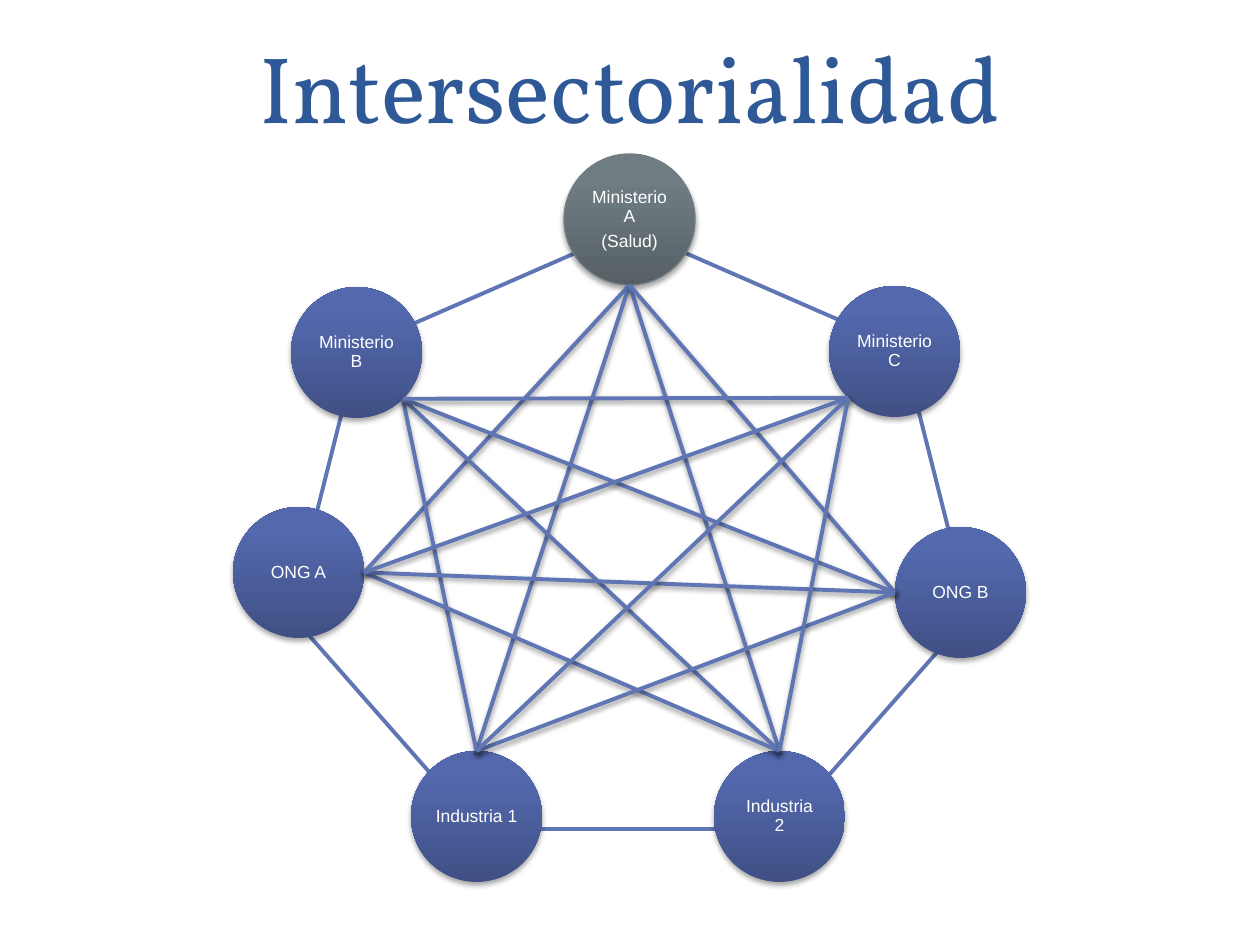
from itertools import combinations

from lxml.etree import SubElement as Sub
from pptx import Presentation
from pptx.dml.color import RGBColor as Rgb
from pptx.enum.shapes import MSO_CONNECTOR as Link, MSO_SHAPE as Kind
from pptx.enum.text import MSO_ANCHOR as Anchor, PP_ALIGN as Align
from pptx.oxml.ns import qn
from pptx.util import Emu, Pt

SCALE = 914400 / 126
SIZE = 131
INK = {
    "line": "6076B4", "title": "2F5897", "white": "FFFFFF",
    "rim": "727D82", "shade": "000000",
}
BLUE = {0: "405085", 80: "5368AD", 100: "5168B0"}
GREY = {0: "566065", 80: "6F7D83", 100: "6F7E84"}
NODES = {
    "min_a": (564, 154, "Ministerio A\n(Salud)", 4),
    "min_b": (291, 287, "Ministerio B", 5),
    "ong_a": (233, 507, "ONG A", 6),
    "ind_1": (411, 751, "Industria 1", 0),
    "ind_2": (714, 751, "Industria\v2", 0),
    "ong_b": (895, 527, "ONG B", 2),
    "min_c": (829, 286, "Ministerio C", 3),
}
HALF, DIAG = 0.5, 0.5 ** 1.5
SITES = {
    0: (HALF, 0), 2: (0, HALF), 3: (HALF - DIAG, HALF + DIAG),
    4: (HALF, 1), 5: (HALF + DIAG, HALF + DIAG), 6: (1, HALF),
}


def px(num):
    return Emu(round(num * SCALE))


def write(frame, text, font="Arial", size=10, ink="white", pad=None, lead=None, after=None):
    frame.word_wrap = True
    frame.vertical_anchor = Anchor.MIDDLE
    if pad is not None:
        frame.margin_left = frame.margin_right = px(pad)
        frame.margin_top = frame.margin_bottom = px(pad)
    frame.text = text
    for para in frame.paragraphs:
        para.alignment = Align.CENTER
        if lead:
            para.line_spacing = lead
        if after:
            para.space_after = Pt(after)
        para.font.name = font
        para.font.size = Pt(size)
        para.font.color.rgb = Rgb.from_string(INK[ink])


class Deck:
    def __init__(self):
        self.file = Presentation()
        self.file.slide_width, self.file.slide_height = px(1260), px(945)
        self.slide = self.file.slides.add_slide(self.file.slide_layouts[5])
        self.shapes = self.slide.shapes

    def title(self, text, *box):
        head = self.shapes.title
        head.left, head.top, head.width, head.height = map(px, box)
        write(head.text_frame, text, font="Vollkorn", size=54, ink="title")

    def stroke(self, line, ink, width):
        line.color.rgb = Rgb.from_string(INK[ink])
        line.width = Pt(width)

    def shade(self, effects, dist, alpha):
        drop = Sub(effects, qn("a:outerShdw"), blurRad=str(Pt(3.1)), dist=str(Pt(dist)),
                   dir="5400000", rotWithShape="0")
        tone = Sub(drop, qn("a:srgbClr"), val=INK["shade"])
        Sub(tone, qn("a:alpha"), val=str(alpha * 1000))

    def ring(self, *box):
        ring = self.shapes.add_shape(Kind.HEPTAGON, *map(px, box))
        ring.shadow.inherit = False
        ring.fill.solid()
        ring.fill.fore_color.rgb = Rgb.from_string(INK["white"])
        self.stroke(ring.line, "line", 2.25)

    def node(self, left, top, text, tones, rim=None):
        node = self.shapes.add_shape(Kind.OVAL, px(left), px(top), px(SIZE), px(SIZE))
        node.fill.gradient()
        node.fill.gradient_angle = 90
        props = node._element.spPr
        stops = props.find(qn("a:gradFill")).find(qn("a:gsLst"))
        stops.clear()
        for pos, tone in tones.items():
            stop = Sub(stops, qn("a:gs"), pos=str(pos * 1000))
            Sub(stop, qn("a:srgbClr"), val=tone)
        if rim:
            self.stroke(node.line, rim, 0.75)
        else:
            node.line.fill.background()
        node.shadow.inherit = False
        self.shade(props.find(qn("a:effectLst")), 1.8, 35)
        write(node.text_frame, text, pad=4, lead=0.9, after=3.5)
        return node

    def link(self, *ends):
        spots = []
        for node, site in ends:
            across, down = SITES[site]
            spots += [round(node.left + across * node.width),
                      round(node.top + down * node.height)]
        wire = self.shapes.add_connector(Link.STRAIGHT, *spots)
        self.stroke(wire.line, "line", 2.25)
        root = wire._element
        self.shade(Sub(root.spPr, qn("a:effectLst")), 1.6, 38)
        joins = root.find(qn("p:nvCxnSpPr")).find(qn("p:cNvCxnSpPr"))
        for tag, (node, site) in zip(("a:stCxn", "a:endCxn"), ends):
            Sub(joins, qn(tag), id=str(node.shape_id), idx=str(site))


def main():
    deck = Deck()
    deck.title("Intersectorialidad", 63, 6, 1134, 159)
    deck.ring(291, 229, 679, 600)
    ends = []
    for name, (left, top, text, site) in NODES.items():
        lead = name == "min_a"
        node = deck.node(left, top, text, GREY if lead else BLUE, "rim" if lead else None)
        ends.append((node, site))
    count = len(ends)
    for one, two in combinations(range(count), 2):
        if two - one not in (1, count - 1):
            deck.link(ends[one], ends[two])
    deck.file.save("out.pptx")


if __name__ == "__main__":
    main()
